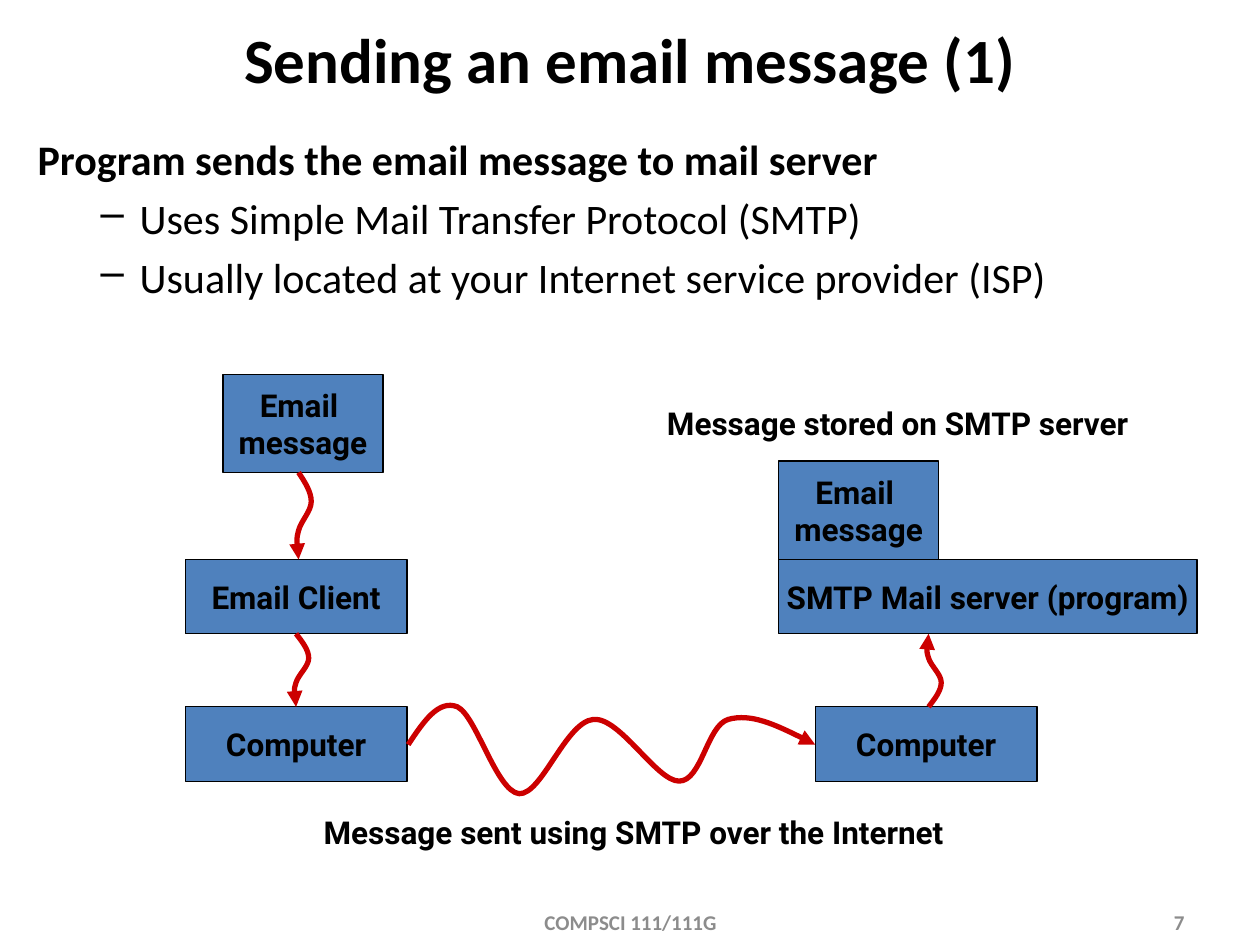
from dataclasses import dataclass

from lxml import etree
from pptx import Presentation
from pptx import util as u
from pptx.dml.color import RGBColor
from pptx.enum import shapes, text
from pptx.oxml.ns import qn

CELL = u.Inches(0.1)  # the slide is a grid of 100 columns by 75 rows


@dataclass(frozen=True)
class Theme:
    heading_font: str = "Calibri"
    diagram_font: str = "Roboto"
    ink: str = "000000"
    muted: str = "8C8C8C"
    box: str = "4F81BD"
    flow: str = "CC0000"
    title_size: int = 36
    body_size: int = 24
    diagram_size: int = 18
    footer_size: int = 12
    box_line: float = 0.75
    flow_line: float = 3


THEME = Theme()


def cells(*counts):
    return [u.Emu(round(count * CELL)) for count in counts]


def style_paragraph(paragraph, font, size, color=THEME.ink, bold=True,
                    align=text.PP_ALIGN.CENTER):
    paragraph.alignment = align
    for run in paragraph.runs:
        run.font.name = font
        run.font.size = u.Pt(size)
        run.font.bold = bold
        run.font.color.rgb = RGBColor.from_string(color)


def add_line_of_text(slide, area, wording, font, size, color=THEME.ink,
                     align=text.PP_ALIGN.CENTER):
    frame = slide.shapes.add_textbox(*cells(*area)).text_frame
    frame.word_wrap = True
    frame.vertical_anchor = text.MSO_ANCHOR.MIDDLE
    frame.text = wording
    style_paragraph(frame.paragraphs[0], font, size, color, align=align)
    return frame


def add_caption(slide, area, wording):
    frame = add_line_of_text(slide, area, wording, THEME.diagram_font, THEME.diagram_size)
    frame.word_wrap = False
    frame.vertical_anchor = text.MSO_ANCHOR.TOP
    frame.auto_size = text.MSO_AUTO_SIZE.SHAPE_TO_FIT_TEXT


def add_dash(paragraph):
    """Indent the paragraph and hang an en dash in front of it."""
    props = paragraph._p.get_or_add_pPr()
    props.set("marL", str(u.Inches(0.81)))
    props.set("indent", str(-u.Inches(0.31)))
    etree.SubElement(props, qn("a:buChar")).set("char", "–")


def add_body(slide, area, heading, points):
    frame = slide.shapes.add_textbox(*cells(*area)).text_frame
    frame.word_wrap = True
    frame.text = "\n".join([heading, *points])
    for index, paragraph in enumerate(frame.paragraphs):
        paragraph.space_before = u.Pt(0.2 * THEME.body_size)
        style_paragraph(paragraph, THEME.heading_font, THEME.body_size,
                        bold=index == 0, align=text.PP_ALIGN.LEFT)
        if index:
            paragraph.level = 1
            add_dash(paragraph)


def add_box(slide, area, wording):
    box = slide.shapes.add_shape(shapes.MSO_SHAPE.RECTANGLE, *cells(*area))
    box.shadow.inherit = False
    box.fill.solid()
    box.fill.fore_color.rgb = RGBColor.from_string(THEME.box)
    box.line.color.rgb = RGBColor.from_string(THEME.ink)
    box.line.width = u.Pt(THEME.box_line)
    frame = box.text_frame
    frame.word_wrap = False
    frame.vertical_anchor = text.MSO_ANCHOR.MIDDLE
    frame.text = wording
    style_paragraph(frame.paragraphs[0], THEME.diagram_font, THEME.diagram_size)


def add_flow(slide, points):
    """Draw a curved arrow: a start, then two controls and an end per curve."""
    start, *rest = [cells(*point) for point in points]
    builder = slide.shapes.build_freeform(*start)
    builder.add_line_segments(rest, close=False)
    flow = builder.convert_to_shape()
    flow.shadow.inherit = False
    flow.fill.background()
    flow.line.color.rgb = RGBColor.from_string(THEME.flow)
    flow.line.width = u.Pt(THEME.flow_line)
    etree.SubElement(flow.line._get_or_add_ln(), qn("a:tailEnd")).set("type", "triangle")

    outline = flow._element.find(".//" + qn("a:path"))
    steps = outline.findall(qn("a:lnTo"))
    for first in range(0, len(steps), 3):
        curve = etree.SubElement(outline, qn("a:cubicBezTo"))
        for step in steps[first:first + 3]:
            curve.append(step[0])
            outline.remove(step)


def add_wiggle(slide, column, start_row, end_row):
    """Draw a short, mostly vertical flow between two rows."""
    sway = [0, 0.5, 1, 1, 1, 0.2, 0, -0.2, -0.1, 0]
    rise = (end_row - start_row) / (len(sway) - 1)
    add_flow(slide, [(column + offset, start_row + i * rise)
                     for i, offset in enumerate(sway)])


def add_diagram(slide):
    sender, server, receiver = 14.7, 61.8, 64.7
    program_row, computer_row = 44.4, 56.1
    width, height = 17.6, 5.9
    message_width, message_height = 12.7, 7.8
    message_row = 29.7

    for left, top, wide, high, wording in (
        (sender, program_row, width, height, "Email Client"),
        (sender + 3, message_row, message_width, message_height, "Email \vmessage"),
        (sender, computer_row, width, height, "Computer"),
        (server, program_row, 33.2, height, "SMTP Mail server (program)"),
        (receiver, computer_row, width, height, "Computer"),
        (server, program_row - message_height, message_width, message_height,
         "Email \vmessage"),
    ):
        add_box(slide, (left, top, wide, high), wording)

    program_bottom = program_row + height
    add_wiggle(slide, 23.7, message_row + message_height, program_row)
    add_wiggle(slide, 23.5, program_bottom, computer_row)
    add_wiggle(slide, 73.7, computer_row, program_bottom)
    add_flow(slide, [
        (32.4, 59.1),
        (33.6, 57.3), (34.8, 55.5), (36.3, 56.1),
        (37.8, 56.8), (39.4, 62.8), (41.2, 63),
        (43, 63.1), (44.9, 57.3), (47.1, 57.1),
        (49.2, 56.9), (52.1, 62), (53.9, 62),
        (55.7, 62), (56.1, 57.6), (57.8, 57.1),
        (59.6, 56.6), (62.2, 57.8), (64.7, 59.1),
    ])
    add_caption(slide, (23.5, 64, 53.6, 4), "Message sent using SMTP over the Internet")
    add_caption(slide, (51, 31.6, 40.5, 4), "Message stored on SMTP server")


def main():
    deck = Presentation()
    deck.slide_width, deck.slide_height = cells(100, 75)
    slide = deck.slides.add_slide(deck.slide_layouts[6])

    add_line_of_text(slide, (1, 1.2, 98, 6.9), "Sending an email message (1)",
                     THEME.heading_font, THEME.title_size)
    add_body(slide, (2, 10.1, 96, 59.8),
             "Program sends the email message to mail server",
             ["Uses Simple Mail Transfer Protocol (SMTP)",
              "Usually located at your Internet service provider (ISP)"])
    add_diagram(slide)
    add_line_of_text(slide, (34.2, 71.8, 31.7, 2.7), "COMPSCI 111/111G",
                     THEME.heading_font, THEME.footer_size, THEME.muted)
    add_line_of_text(slide, (71.7, 71.8, 23.3, 2.7), "7", THEME.heading_font,
                     THEME.footer_size, THEME.muted, text.PP_ALIGN.RIGHT)
    deck.save("out.pptx")


if __name__ == "__main__":
    main()
